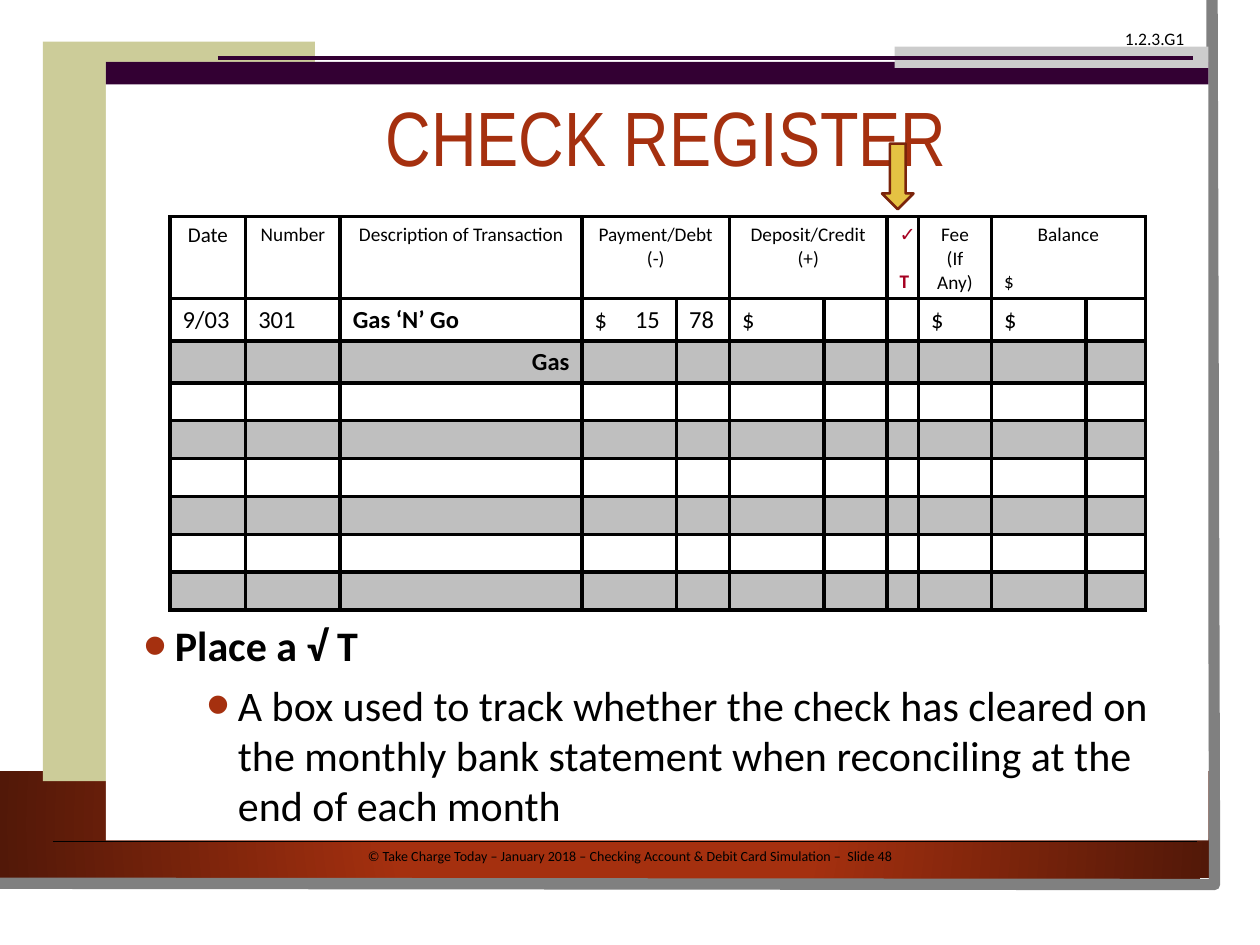
from dataclasses import dataclass

import pptx
import pptx.util
import pptx.dml.color
import pptx.enum.shapes
import pptx.enum.text
import pptx.oxml
import pptx.oxml.ns
from lxml import etree

PX = 9144
HUES = {
    "white": "FFFFFF", "black": "000000", "rust": "A5300F", "dark": "521808",
    "khaki": "CCCC99", "plum": "330033", "silver": "CCCCCC", "band": "BFBFBF",
    "gray": "808080", "gold": "E5C243", "brown": "7A240B", "red": "A50021",
}
ALIGN = pptx.enum.text.PP_ALIGN
FORM = pptx.enum.shapes.MSO_SHAPE
NS = pptx.oxml.ns.nsdecls("a")


@dataclass
class Para:
    text: str
    size: int = 11
    bold: bool = False
    align: ALIGN = ALIGN.LEFT
    hue: str = "black"
    face: str = "Calibri"
    before: int = 0
    indent: int = 0
    tab: int = 0


@dataclass
class Block:
    box: tuple
    fill: str
    form: FORM = FORM.RECTANGLE
    edge: str = ""
    width: float = 0


@dataclass
class Rule:
    left: int
    right: int
    top: int
    hue: str
    width: float


def color(name: str) -> pptx.dml.color.RGBColor:
    return pptx.dml.color.RGBColor.from_string(HUES[name])


def scale(box: tuple) -> list:
    return [n * PX for n in box]


def apply(item, form: dict) -> None:
    for key, value in form.items():
        setattr(item, key, value)


def add_xml(node, text: str) -> None:
    node.append(pptx.oxml.parse_xml(text))


def write(frame, paras: list) -> None:
    for i, para in enumerate(paras):
        line = frame.paragraphs[0] if i == 0 else frame.add_paragraph()
        apply(line, {"alignment": para.align, "space_before": pptx.util.Pt(para.before)})
        props = line._p.get_or_add_pPr()
        if para.indent:
            props.set("marL", str(para.indent * PX))
            props.set("indent", str(-25 * PX))
            add_xml(props, f'<a:buClr {NS}><a:srgbClr val="{HUES["rust"]}"/></a:buClr>')
            add_xml(props, f'<a:buSzPct {NS} val="160000"/>')
            add_xml(props, f'<a:buFont {NS} typeface="Arial"/>')
            add_xml(props, f'<a:buChar {NS} char="•"/>')
        if para.tab:
            add_xml(props, f'<a:tabLst {NS}><a:tab pos="{para.tab * PX}" algn="l"/></a:tabLst>')
        run = line.add_run()
        run.text = para.text
        apply(run.font, {"size": pptx.util.Pt(para.size), "bold": para.bold, "name": para.face})
        run.font.color.rgb = color(para.hue)


def add_text(slide, box: tuple, paras: list, anchor=pptx.enum.text.MSO_ANCHOR.TOP) -> None:
    frame = slide.shapes.add_textbox(*scale(box)).text_frame
    apply(frame, {"word_wrap": True, "vertical_anchor": anchor})
    write(frame, paras)


def add_block(slide, block: Block):
    shape = slide.shapes.add_shape(block.form, *scale(block.box))
    shape.shadow.inherit = False
    shape.fill.solid()
    shape.fill.fore_color.rgb = color(block.fill)
    if block.edge:
        shape.line.color.rgb = color(block.edge)
        shape.line.width = pptx.util.Pt(block.width)
    else:
        shape.line.fill.background()
    return shape


def add_rule(slide, rule: Rule) -> None:
    ends = scale((rule.left, rule.top, rule.right, rule.top))
    line = slide.shapes.add_connector(pptx.enum.shapes.MSO_CONNECTOR.STRAIGHT, *ends)
    line.line.color.rgb = color(rule.hue)
    line.line.width = pptx.util.Pt(rule.width)
    add_xml(line._element.spPr, f"<a:effectLst {NS}/>")


def add_floor(slide) -> None:
    shape = add_block(slide, Block((0, 612, 960, 85), "rust"))
    props = shape._element.spPr
    solid = props.find(pptx.oxml.ns.qn("a:solidFill"))
    props.replace(solid, pptx.oxml.parse_xml(
        f'<a:gradFill {NS} rotWithShape="1"><a:gsLst>'
        f'<a:gs pos="34000"><a:srgbClr val="{HUES["rust"]}"/></a:gs>'
        f'<a:gs pos="100000"><a:srgbClr val="{HUES["dark"]}"/></a:gs></a:gsLst>'
        '<a:path path="circle"><a:fillToRect l="50000" t="50000" r="50000" b="50000"/></a:path>'
        '</a:gradFill>'))


def add_edge(slide) -> None:
    pen = slide.shapes.build_freeform(962, 0, scale=PX)
    pen.add_line_segments([(964, 702), (-2, 701)], close=False)
    shape = pen.convert_to_shape()
    shape.shadow.inherit = False
    shape.fill.background()
    shape.line.color.rgb = color("gray")
    shape.line.width = pptx.util.Pt(6.5)


def add_grid(slide, box: tuple, cols: list, rows: list, texts: dict, spans: list) -> None:
    frame = slide.shapes.add_table(len(rows), len(cols), *scale(box))
    table = frame.table
    apply(table, {"first_row": False, "horz_banding": False})
    for col, wide in zip(table.columns, cols):
        col.width = wide * PX
    for row, high in zip(table.rows, rows):
        row.height = high * PX
    for r in range(len(rows)):
        for c in range(len(cols)):
            cell = table.cell(r, c)
            props = cell._tc.get_or_add_tcPr()
            for side in "LRTB":
                add_xml(props, f'<a:ln{side} {NS} w="28575"><a:solidFill>'
                               f'<a:srgbClr val="{HUES["black"]}"/></a:solidFill></a:ln{side}>')
            cell.fill.solid()
            cell.fill.fore_color.rgb = color("band" if r and r % 2 == 0 else "white")
            if (r, c) in texts:
                write(cell.text_frame, texts[r, c])
            else:
                etree.SubElement(cell.text_frame.paragraphs[0]._p,
                                 pptx.oxml.ns.qn("a:endParaRPr"), sz="1200")
    for c in spans:
        table.cell(0, c).merge(table.cell(0, c + 1))


def head(text: str, **form) -> Para:
    return Para(text, **{"align": ALIGN.CENTER, **form})


def entry(text: str, **form) -> Para:
    return Para(text, size=14, **form)


def main() -> None:
    deck = pptx.Presentation()
    apply(deck, {"slide_width": 1000 * PX, "slide_height": 750 * PX})
    slide = deck.slides.add_slide(deck.slide_layouts[5])

    add_block(slide, Block((0, 0, 983, 727), "white"))
    add_floor(slide)
    add_edge(slide)
    add_text(slide, (42, 668, 917, 24), [head(
        "© Take Charge Today – January 2018 – Checking Account & Debit Card Simulation –  Slide 48",
        size=8)])
    for block in (
        Block((34, 33, 216, 587), "khaki"),
        Block((84, 49, 875, 618), "white"),
        Block((84, 49, 875, 18), "plum"),
        Block((710, 37, 249, 17), "silver"),
    ):
        add_block(slide, block)
    add_rule(slide, Rule(173, 947, 46, "plum", 2))
    add_rule(slide, Rule(42, 950, 668, "black", 0.75))
    add_text(slide, (883, 17, 75, 27), [Para("1.2.3.G1", 10)])

    middle = pptx.enum.text.MSO_ANCHOR.MIDDLE
    title = slide.shapes.title
    apply(title, dict(zip(("left", "top", "width", "height"), scale((296, 50, 467, 125)))))
    apply(title.text_frame, {"word_wrap": True, "vertical_anchor": middle,
                             "auto_size": pptx.enum.text.MSO_AUTO_SIZE.NONE})
    write(title.text_frame, [Para("CHECK REGISTER", 44, hue="rust", face="Arial Narrow")])
    title.text_frame.paragraphs[0].line_spacing = 0.9
    title.element.getparent().append(title.element)

    add_text(slide, (104, 492, 850, 167), [
        Para("Place a √ T", 24, True, indent=25),
        Para("A box used to track whether the check has cleared on the monthly bank "
             "statement when reconciling at the end of each month", 24, before=5, indent=75),
    ], middle)
    add_block(slide, Block((700, 114, 25, 52), "gold", FORM.DOWN_ARROW, "brown", 1.5))

    mark = {"hue": "red", "bold": True}
    texts = {
        (0, 0): [head("Date", size=12)],
        (0, 1): [head("Number")],
        (0, 2): [head("Description of Transaction")],
        (0, 3): [head("Payment/Debt"), head("(-)")],
        (0, 5): [head("Deposit/Credit"), head("(+)")],
        (0, 7): [head("✓", **mark), head("T", before=13, **mark)],
        (0, 8): [head("Fee (If Any)")],
        (0, 9): [head("Balance"), Para("$", before=13)],
        (1, 0): [entry("9/03")],
        (1, 1): [entry("301")],
        (1, 2): [entry("Gas ‘N’ Go", bold=True)],
        (1, 3): [entry("$\t15", tab=32)],
        (1, 4): [entry("78")],
        **{(1, c): [entry("$")] for c in (5, 8, 9)},
        (2, 2): [entry("Gas", bold=True, align=ALIGN.RIGHT)],
    }
    cols = [60, 75, 192, 75, 42, 75, 50, 25, 58, 75, 47]
    add_grid(slide, (135, 172, 774, 312), cols, [58] + [27] * 8, texts, [3, 5, 9])
    deck.save("out.pptx")


if __name__ == "__main__":
    main()
